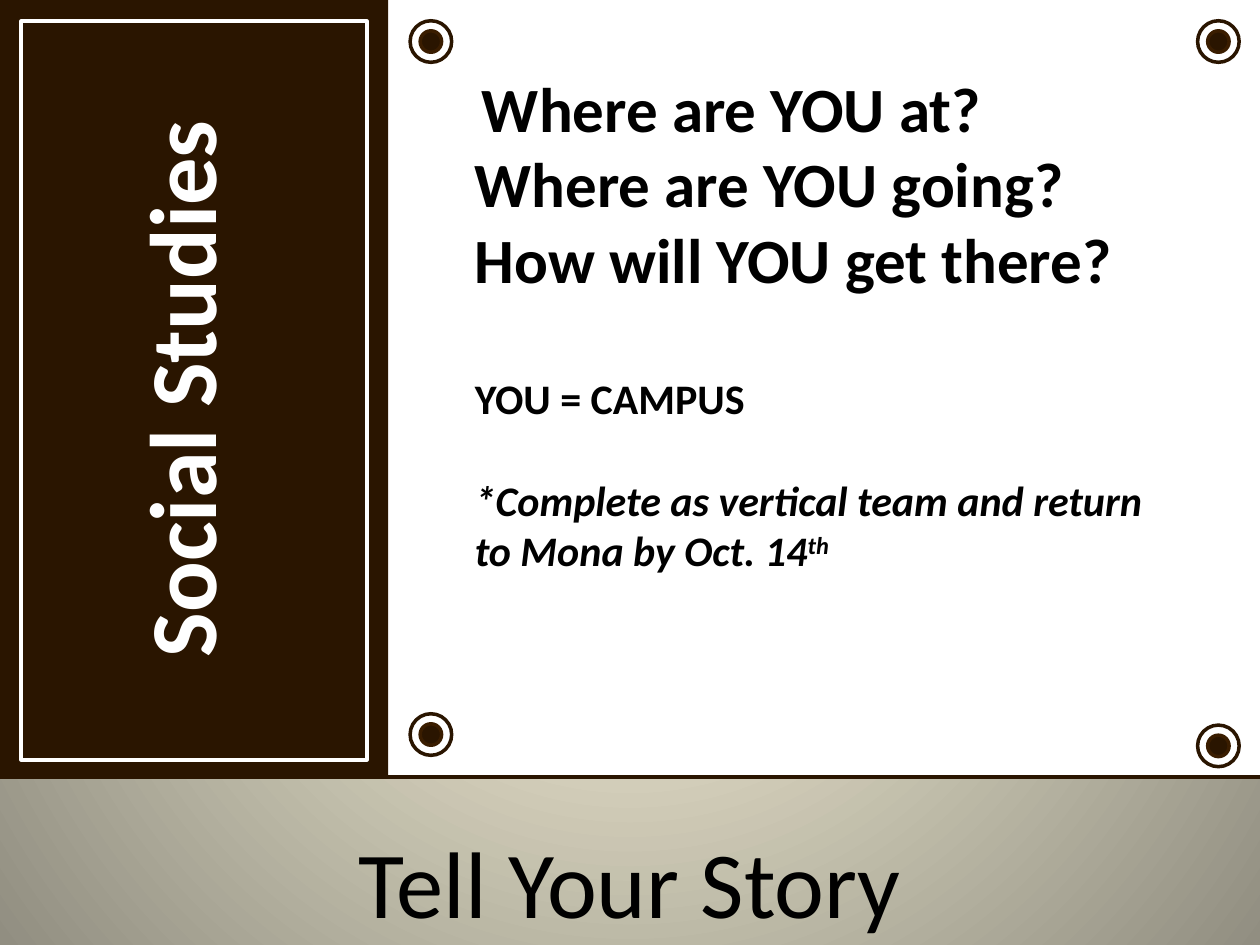
from pptx import Presentation
from pptx.dml.color import RGBColor
from pptx.enum.shapes import MSO_CONNECTOR, MSO_SHAPE
from pptx.enum.text import PP_ALIGN
from pptx.oxml.ns import qn
from pptx.util import Inches, Pt
from lxml import etree

RECT, OVAL = MSO_SHAPE.RECTANGLE, MSO_SHAPE.OVAL
LEFT, MID = PP_ALIGN.LEFT, PP_ALIGN.CENTER
WHITE = RGBColor(0xFF, 0xFF, 0xFF)
BLACK = RGBColor(0, 0, 0)
BROWN = RGBColor(0x2A, 0x15, 0x00)
RUST = RGBColor(0x3A, 0x1D, 0x00)
CREAM = RGBColor(0xFC, 0xF7, 0xDD)
STONE = RGBColor(0x91, 0x8E, 0x81)
FONT = "Calibri"

WIDE, HIGH = 10, 7.5
SIDE, BASE = 3.08, 6.16  # width of the side panel, height of the upper area
INSET = 0.17
LINE = 1.22  # line height as a multiple of the text size

HEAD = dict(size=36, bold=True)
NOTE = dict(size=24, bold=True)
SLANT = dict(NOTE, italic=True)
# Each paragraph: space before in points, then its runs
BODY = [
    (0, [(" ", dict(size=18)), ("Where are YOU at?", HEAD)]),
    (0, [("Where are YOU going?", HEAD)]),
    (0, [("How will YOU get there?", HEAD)]),
    (36 * LINE, [("YOU = CAMPUS", NOTE)]),
    (24 * LINE, [("*Complete as vertical team and return to Mona by Oct. 14", SLANT),
                 ("th", dict(SLANT, raised=True))]),
]
TITLE = [(0, [("Tell Your Story", dict(size=54))])]
LABEL = [(0, [("Social Studies", dict(size=54, bold=True, color=WHITE))])]
# Centres of the corner rivets
RIVETS = [(3.42, 0.33), (9.67, 5.92), (3.42, 5.83), (9.67, 0.33)]

deck = Presentation()
deck.slide_width, deck.slide_height = Inches(WIDE), Inches(HIGH)
slide = deck.slides.add_slide(deck.slide_layouts[6])


def glow(inner, outer):
    """Fill the background with a round gradient from the centre."""
    fill = slide.background.fill
    fill.gradient()
    for stop, color, place in zip(fill.gradient_stops, (inner, outer), (0, 1)):
        stop.color.rgb = color
        stop.position = place
    grad = slide.background._cSld.find(".//" + qn("a:gradFill"))
    grad.remove(grad.find(qn("a:lin")))
    ring = etree.SubElement(grad, qn("a:path"), path="circle")
    etree.SubElement(ring, qn("a:fillToRect"), l="50000", t="50000", r="50000", b="50000")


def shape(kind, x, y, w, h, fill=None, line=None, weight=2):
    item = slide.shapes.add_shape(kind, *map(Inches, (x, y, w, h)))
    item.shadow.inherit = False
    if fill is None:
        item.fill.background()
    else:
        item.fill.solid()
        item.fill.fore_color.rgb = fill
    if line is None:
        item.line.fill.background()
    else:
        item.line.color.rgb = line
        item.line.width = Pt(weight)


def disc(x, y, size, fill, line):
    shape(OVAL, x - size / 2, y - size / 2, size, size, fill, line)


def rule(y, color, weight):
    item = slide.shapes.add_connector(
        MSO_CONNECTOR.STRAIGHT, 0, Inches(y), Inches(WIDE), Inches(y))
    item.line.color.rgb = color
    item.line.width = Pt(weight)
    etree.SubElement(item._element.spPr, qn("a:effectLst"))


def style(run, size, bold=False, italic=False, color=BLACK, raised=False):
    font = run.font
    font.name, font.size = FONT, Pt(size)
    font.bold, font.italic = bold, italic
    font.color.rgb = color
    if raised:
        run._r.get_or_add_rPr().set("baseline", "30000")


def text(x, y, w, h, paras, align=LEFT, upward=False):
    frame = slide.shapes.add_textbox(*map(Inches, (x, y, w, h))).text_frame
    frame.word_wrap = True
    if upward:
        frame._txBody.bodyPr.set("vert", "vert270")
    for i, (gap, runs) in enumerate(paras):
        para = frame.add_paragraph() if i else frame.paragraphs[0]
        para.alignment = align
        para.space_before = Pt(gap)
        for words, form in runs:
            run = para.add_run()
            run.text = words
            style(run, **form)


glow(CREAM, STONE)
shape(RECT, SIDE, 0, WIDE - SIDE, BASE, WHITE)
shape(RECT, 0, 0, SIDE, BASE, BROWN)
for x, y in RIVETS:
    disc(x, y, 0.33, WHITE, BROWN)
    disc(x, y, 0.17, BROWN, RUST)
rule(BASE + 0.01, BROWN, 2.25)
shape(RECT, INSET, INSET, SIDE - 2 * INSET, BASE - 0.3, line=WHITE, weight=2.25)
text(0.92, INSET, 1.11, 5.83, LABEL, align=MID, upward=True)
text(0, 6.49, WIDE, 1.01, TITLE, align=MID)
text(3.67, 0.5, 5.83, 5.69, BODY)
deck.save("out.pptx")
